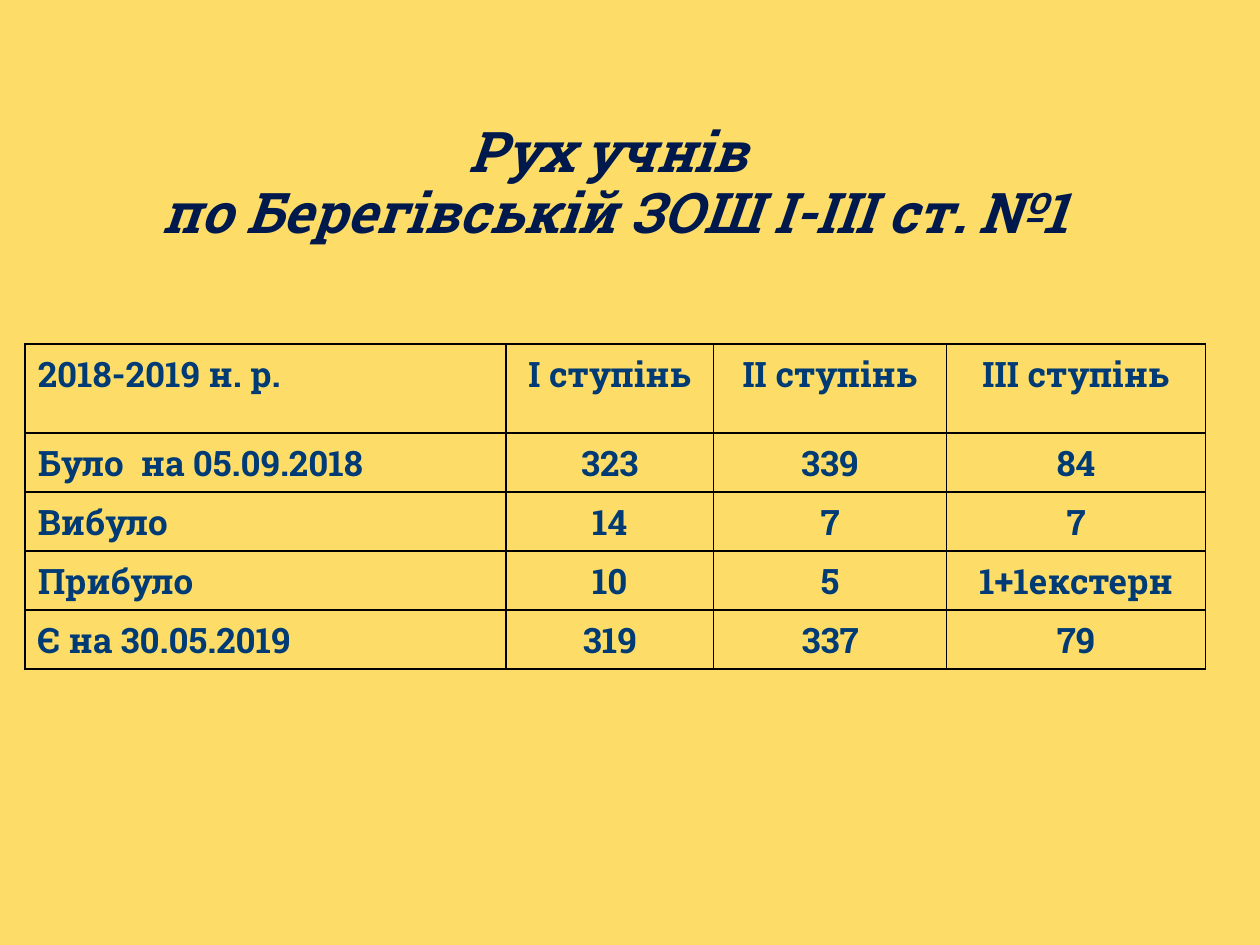
import dataclasses

import lxml.etree
import pptx
import pptx.dml.color
import pptx.enum.text
import pptx.oxml.ns
import pptx.util

Inches = pptx.util.Inches
ALIGN = pptx.enum.text.PP_ALIGN
ANCHOR = pptx.enum.text.MSO_ANCHOR


@dataclasses.dataclass(frozen=True)
class Theme:
    font: str = "Roboto Slab"
    background: str = "FDDD68"
    heading: str = "00194C"
    body: str = "003B76"
    border: str = "000000"
    heading_size: int = 32
    body_size: int = 20
    border_width: int = 1


THEME = Theme()
SLIDE_WIDTH, SLIDE_HEIGHT = 10, 7.5

HEADING = "Рух учнів \vпо Берегівській ЗОШ І-ІІІ ст. №1"
HEADING_BOX = (0, 0.52, 9.76, 1.89)

PUPIL_COUNTS = [
    ("2018-2019 н. р.", "І ступінь", "ІІ ступінь", "ІІІ ступінь"),
    ("Було  на 05.09.2018", "323", "339", "84"),
    ("Вибуло", "14", "7", "7"),
    ("Прибуло", "10", "5", "1+1екстерн"),
    ("Є на 30.05.2019", "319", "337", "79"),
]
COUNTS_BOX = (0.2, 2.73, 9.37, 2.58)
COLUMN_SHARES = (3.82, 1.65, 1.85, 2.06)
ROW_SHARES = (0.71, 0.47, 0.47, 0.47, 0.47)


def rgb(code):
    return pptx.dml.color.RGBColor.from_string(code)


def style_paragraph(paragraph, size, color, align, italic=False):
    paragraph.alignment = align
    font = paragraph.font
    font.name, font.size = THEME.font, pptx.util.Pt(size)
    font.bold, font.italic = True, italic
    font.color.rgb = rgb(color)


def share_out(tracks, attribute, total, shares):
    """Divide a table's total length among its columns or rows."""
    for track, share in zip(tracks, shares):
        setattr(track, attribute, Inches(total * share / sum(shares)))


def outline_cell(cell):
    properties = cell._tc.get_or_add_tcPr()
    for position, side in enumerate(("a:lnL", "a:lnR", "a:lnT", "a:lnB")):
        line = lxml.etree.Element(
            pptx.oxml.ns.qn(side), w=str(pptx.util.Pt(THEME.border_width))
        )
        fill = lxml.etree.SubElement(line, pptx.oxml.ns.qn("a:solidFill"))
        lxml.etree.SubElement(fill, pptx.oxml.ns.qn("a:srgbClr"), val=THEME.border)
        properties.insert(position, line)


def add_heading(slide, box):
    frame = slide.shapes.add_textbox(*map(Inches, box)).text_frame
    frame.word_wrap = True
    frame.vertical_anchor = ANCHOR.MIDDLE
    paragraph = frame.paragraphs[0]
    paragraph.text = HEADING
    paragraph.line_spacing = 0.9
    style_paragraph(
        paragraph, THEME.heading_size, THEME.heading, ALIGN.CENTER, italic=True
    )


def add_pupil_counts(slide, box):
    table = slide.shapes.add_table(
        len(ROW_SHARES), len(COLUMN_SHARES), *map(Inches, box)
    ).table
    table.first_row = table.horz_banding = False
    share_out(table.columns, "width", box[2], COLUMN_SHARES)
    share_out(table.rows, "height", box[3], ROW_SHARES)
    for row, entries in enumerate(PUPIL_COUNTS):
        for column, entry in enumerate(entries):
            cell = table.cell(row, column)
            cell.text = entry
            cell.fill.background()
            outline_cell(cell)
            align = ALIGN.CENTER if column else ALIGN.LEFT
            style_paragraph(
                cell.text_frame.paragraphs[0], THEME.body_size, THEME.body, align
            )


def main():
    deck = pptx.Presentation()
    deck.slide_width, deck.slide_height = Inches(SLIDE_WIDTH), Inches(SLIDE_HEIGHT)
    slide = deck.slides.add_slide(deck.slide_layouts[6])
    slide.background.fill.solid()
    slide.background.fill.fore_color.rgb = rgb(THEME.background)
    add_heading(slide, HEADING_BOX)
    add_pupil_counts(slide, COUNTS_BOX)
    deck.save("out.pptx")


if __name__ == "__main__":
    main()
